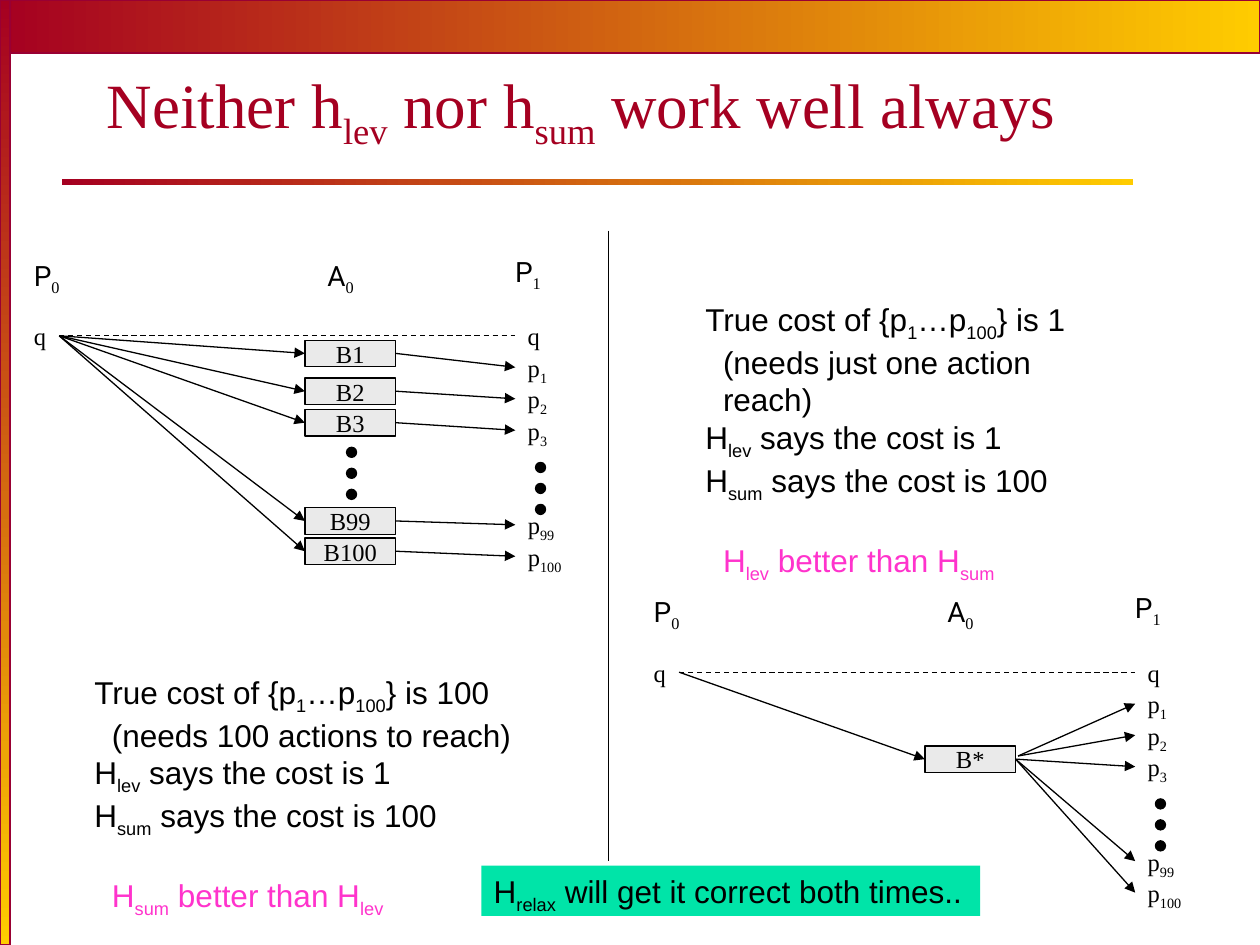
from lxml.etree import SubElement
from pptx import Presentation
from pptx.dml.color import RGBColor
from pptx.enum.dml import MSO_LINE
from pptx.enum.shapes import MSO_CONNECTOR, MSO_SHAPE
from pptx.enum.text import MSO_ANCHOR, PP_ALIGN
from pptx.oxml.ns import qn
from pptx.util import Inches, Pt

SERIF, SANS, HEADING = "Times New Roman", "Arial", "Roboto"
RIGHT, LEFT = 3, 1
color = RGBColor.from_string

deck = Presentation()
deck.slide_width, deck.slide_height = Inches(10), Inches(7.5)
page = deck.slides.add_slide(deck.slide_layouts[6])
shapes = page.shapes


def write(box, lines, size, font, hue="000000", sub_font=None):
    """Fill a box with lines of text; parts between ~ marks are subscripts."""
    frame = box.text_frame
    frame.word_wrap = False
    for number, line in enumerate(lines):
        para = frame.add_paragraph() if number else frame.paragraphs[0]
        for index, part in enumerate(line.split("~")):
            if not part:
                continue
            span = para.add_run()
            span.text = part
            span.font.size = Pt(size)
            span.font.name = font
            span.font.color.rgb = color(hue)
            if index % 2:
                span.font.name = sub_font or font
                span.font._element.set("baseline", "-25000")
    return frame


def connect(x1, y1, x2, y2, arrow=True):
    line = shapes.add_connector(MSO_CONNECTOR.STRAIGHT, Inches(x1), Inches(y1),
                                Inches(x2), Inches(y2))
    line.line.color.rgb = color("000000")
    line.line.width = Pt(0.75)
    if arrow:
        SubElement(line.line._get_or_add_ln(), qn("a:tailEnd"), type="triangle")
    SubElement(line._element.spPr, qn("a:effectLst"))
    return line


# Gradient bars: left, top, width, height, angle, outlined
for left, top, width, height, angle, outlined in [
        (0, 0, 10, 0.42, 0, True),
        (0.49, 1.42, 8.5, 0.05, 0, False),
        (0, 0, 0.08, 7.5, 270, True)]:
    bar = shapes.add_shape(MSO_SHAPE.RECTANGLE, Inches(left), Inches(top),
                           Inches(width), Inches(height))
    bar.shadow.inherit = False
    bar.fill.gradient()
    bar.fill.gradient_angle = angle
    for stop, hue in zip(bar.fill.gradient_stops, ("A50021", "FFCC00")):
        stop.color.rgb = color(hue)
    if outlined:
        bar.line.color.rgb = color("990033")
        bar.line.width = Pt(0.75)
    else:
        bar.line.fill.background()

title = shapes.add_textbox(Inches(0.75), Inches(0.5), Inches(8.52), Inches(0.75))
frame = write(title, ["Neither h~lev~ nor h~sum~ work well always"], 36, SERIF, "A50021")
frame.vertical_anchor = MSO_ANCHOR.BOTTOM
frame.word_wrap = True

# Planning graphs: offset from the first one, actions (name, top), dot columns
goals = [("p~1~", 2.75, 0.36), ("p~2~", 3, 0.36), ("p~3~", 3.25, 0.36),
         ("p~99~", 4, 0.42), ("p~100~", 4.25, 0.49)]
many_actions = [("B1", 2.7), ("B2", 3), ("B3", 3.25), ("B99", 4.03), ("B100", 4.27)]
graphs = [(0, 0, many_actions, [(4.25, 3.67), (2.75, 3.55)]),
          (4.92, 2.67, [("B*", 3.25)], [(4.25, 3.67)])]

for dx, dy, actions, dot_columns in graphs:
    for text, left, top in [("P~0~", 0.17, 2), ("A~0~", 2.5, 2), ("P~1~", 3.99, 1.97)]:
        heading = shapes.add_textbox(Inches(left + dx), Inches(top + dy),
                                     Inches(0.43), Inches(0.37))
        write(heading, [text], 16, HEADING, sub_font=SERIF)

    labels = []
    for text, left, top, width in [("q", 0.17, 2.5, 0.3), ("q", 4.09, 2.5, 0.3),
                                   *[(goal, 4.09, top, width) for goal, top, width in goals]]:
        label = shapes.add_textbox(Inches(left + dx), Inches(top + dy),
                                   Inches(width), Inches(0.33))
        write(label, [text], 14, SERIF)
        labels.append(label)
    start, kept, *goal_labels = labels

    persistence = connect(0.47 + dx, 2.67 + dy, 4.09 + dx, 2.67 + dy, arrow=False)
    persistence.line.dash_style = MSO_LINE.DASH
    persistence.begin_connect(start, RIGHT)
    persistence.end_connect(kept, LEFT)

    action_boxes = []
    for name, top in actions:
        box = shapes.add_shape(MSO_SHAPE.RECTANGLE, Inches(2.42 + dx), Inches(top + dy),
                               Inches(0.72), Inches(0.21))
        box.shadow.inherit = False
        box.fill.solid()
        box.fill.fore_color.rgb = color("EAEAEA")
        box.line.color.rgb = color("000000")
        box.line.width = Pt(0.75)
        frame = write(box, [name], 14, SERIF)
        frame.vertical_anchor = MSO_ANCHOR.MIDDLE
        frame.paragraphs[0].alignment = PP_ALIGN.CENTER
        action_boxes.append(box)
        arrow = connect(0.47 + dx, 2.67 + dy, 2.42 + dx, top + 0.1 + dy)
        arrow.begin_connect(start, RIGHT)
        arrow.end_connect(box, LEFT)

    # A single action reaches every goal; otherwise each action reaches its own
    sources = action_boxes * (len(goals) // len(action_boxes))
    for source, goal_label, (_, top, _) in zip(sources, goal_labels, goals):
        arrow = connect(3.16 + dx, 3.33 + dy, 4.09 + dx, top + 0.17 + dy)
        if len(actions) > 1 or top >= 3.25:
            arrow.begin_connect(source, RIGHT)
        arrow.end_connect(goal_label, LEFT)

    for left, top in dot_columns:
        for step in range(3):
            dot = shapes.add_shape(MSO_SHAPE.OVAL, Inches(left + dx),
                                   Inches(top + dy + step / 6), Inches(0.08), Inches(0.08))
            dot.shadow.inherit = False
            dot.fill.solid()
            dot.fill.fore_color.rgb = color("000000")
            dot.line.color.rgb = color("000000")
            dot.line.width = Pt(0.75)

connect(4.83, 1.83, 4.83, 6.83, arrow=False)

# Cost comparisons: left, top, width, true cost, remark, better, worse
for left, top, width, cost, remark, better, worse in [
        (0.65, 5.29, 3.51, 100, "(needs 100 actions to reach)", "sum", "lev"),
        (5.5, 2.33, 3.56, 1, "(needs just one action reach)", "lev", "sum")]:
    box = shapes.add_textbox(Inches(left), Inches(top), Inches(width), Inches(1.9))
    frame = write(box, [f"True cost of {{p~1~…p~100~}} is {cost}", remark,
                        "H~lev~ says the cost is 1", "H~sum~ says the cost is 100",
                        f"H~{better}~ better than H~{worse}~"], 18, SANS)
    verdict = frame.paragraphs[4]
    verdict.space_before = Pt(21)
    for span in verdict.runs:
        span.font.color.rgb = color("FF33CC")
    for para in (frame.paragraphs[1], verdict):
        para._p.get_or_add_pPr().set("marL", str(Inches(0.14)))

conclusion = shapes.add_textbox(Inches(3.82), Inches(6.87), Inches(3.96), Inches(0.4))
conclusion.fill.solid()
conclusion.fill.fore_color.rgb = color("00E4A8")
write(conclusion, ["H~relax~ will get it correct both times.."], 18, SANS)

deck.save("out.pptx")
